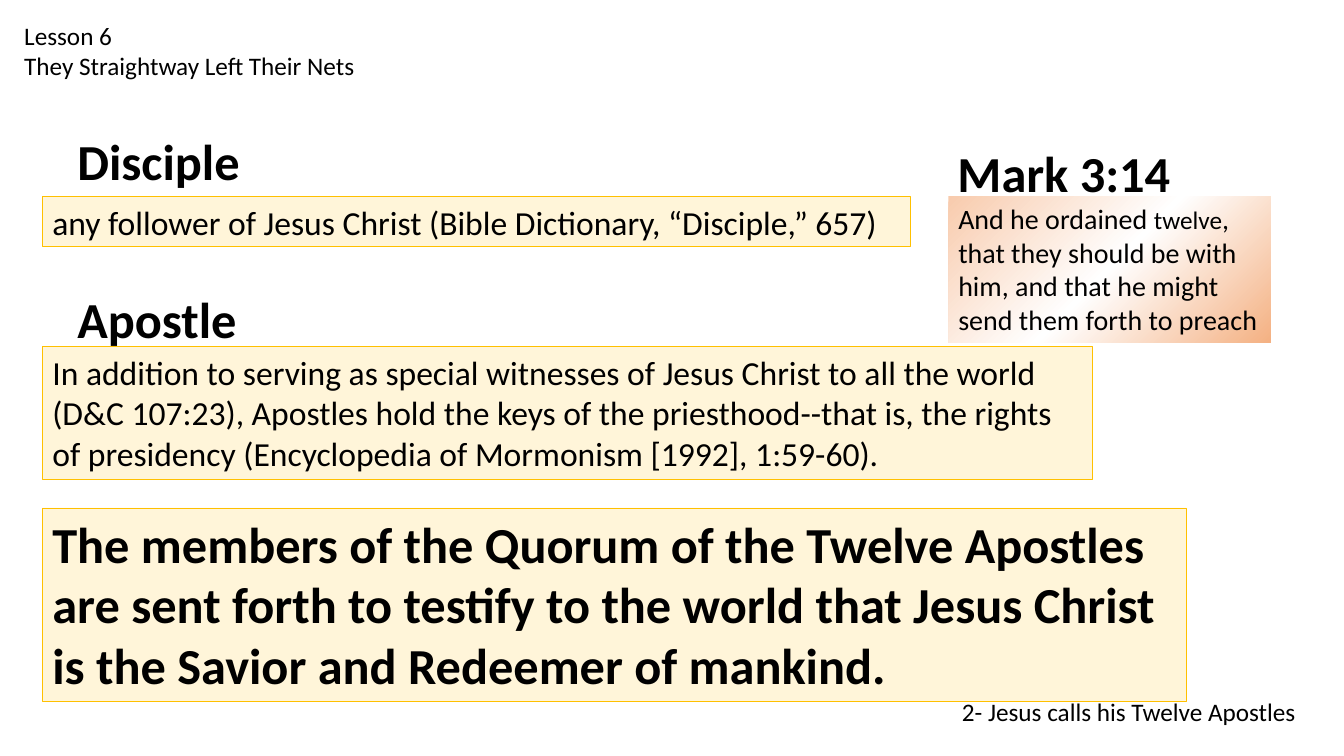
"""Build the lesson slide on disciples and apostles."""
from lxml.etree import SubElement
from pptx import Presentation
from pptx.dml.color import RGBColor
from pptx.enum.shapes import MSO_SHAPE
from pptx.enum.text import MSO_ANCHOR, MSO_AUTO_SIZE, PP_ALIGN
from pptx.oxml import parse_xml
from pptx.oxml.ns import nsdecls, qn
from pptx.util import Cm, Pt

HUES = {"ink": "000000", "cream": "FFF2CC", "gold": "FFC000",
        "rust": "F4B183", "white": "FFFFFF", "peach": "F8CBAD"}


def hue(name):
    return RGBColor.from_string(HUES[name])


class Deck:
    """Hold the text style and the current slide."""

    def __init__(self):
        self.font = "Calibri"
        self.show = Presentation()
        self.show.slide_width, self.show.slide_height = Cm(33.87), Cm(19.05)
        self.slide = self.show.slides.add_slide(self.show.slide_layouts[5])

    def words(self, shape, lines, size, bold=False, wrap=False, align=PP_ALIGN.LEFT):
        frame = shape.text_frame
        frame.word_wrap = wrap
        frame.auto_size = MSO_AUTO_SIZE.SHAPE_TO_FIT_TEXT
        frame.vertical_anchor = MSO_ANCHOR.TOP
        frame.margin_left = frame.margin_right = Cm(0.25)
        frame.margin_top = frame.margin_bottom = Cm(0.13)
        frame.text = "\n".join(lines)
        for para in frame.paragraphs:
            para.alignment = align
            font = para.font
            font.name, font.size, font.bold = self.font, Pt(size), bold
            font.color.rgb = hue("ink")

    def title(self, place, lines, size):
        shape = self.slide.shapes.title
        shape.left, shape.top, shape.width, shape.height = map(Cm, place)
        self.words(shape, lines, size)

    def label(self, place, text, size, bold=False, align=PP_ALIGN.LEFT):
        shape = self.slide.shapes.add_textbox(*map(Cm, place))
        self.words(shape, [text], size, bold, align=align)

    def panel(self, place, text, size, bold=False):
        shape = self.slide.shapes.add_shape(MSO_SHAPE.RECTANGLE, *map(Cm, place))
        shape.shadow.inherit = False
        self.words(shape, [text], size, bold, wrap=True)
        return shape

    def note(self, place, text, size, bold=False, glow=False):
        shape = self.panel(place, text, size, bold)
        shape.fill.solid()
        shape.fill.fore_color.rgb = hue("cream")
        tint = shape.element.spPr.find(qn("a:solidFill"))[0]
        SubElement(tint, qn("a:alpha"), val="74000")
        shape.line.color.rgb = hue("gold")
        shape.line.width = Pt(0.5)
        if glow:
            run = shape.element.find(".//" + qn("a:r"))
            run.get_or_add_rPr().append(parse_xml(
                f'<a:effectLst {nsdecls("a")}><a:outerShdw blurRad="38100" '
                'dist="38100" dir="2700000" algn="tl"><a:srgbClr val="000000">'
                '<a:alpha val="43000"/></a:srgbClr></a:outerShdw></a:effectLst>'))

    def verse(self, place, parts, size, small):
        shape = self.panel(place, parts[0], size)
        para = shape.text_frame.paragraphs[0]
        for part in parts[1:]:
            para.add_run().text = part
        para.runs[1].font.size = Pt(small)
        shape.line.fill.background()
        shape.fill.background()
        stops = "".join(
            f'<a:gs pos="{spot * 1000}"><a:srgbClr val="{HUES[name]}"/></a:gs>'
            for spot, name in ((0, "rust"), (50, "white"), (100, "peach")))
        blend = parse_xml(
            f'<a:gradFill {nsdecls("a")} rotWithShape="1"><a:gsLst>{stops}</a:gsLst>'
            '<a:path path="circle"><a:fillToRect l="100000" t="100000"/></a:path>'
            '</a:gradFill>')
        props = shape.element.spPr
        props.replace(props.find(qn("a:noFill")), blend)


def main():
    deck = Deck()
    deck.title((0.36, 0.38, 8.94, 1.8),
               ["Lesson 6", "They Straightway Left Their Nets"], 18)
    deck.label((23.88, 17.42, 9.02, 1.02), "2- Jesus calls his Twelve Apostles",
               18, align=PP_ALIGN.RIGHT)
    deck.label((1.7, 7.14, 4.57, 1.8), "Apostle", 36, True)
    deck.note((1.07, 8.74, 26.47, 3.33),
              "In addition to serving as special witnesses of Jesus Christ to all "
              "the world (D&C 107:23), Apostles hold the keys of the "
              "priesthood--that is, the rights of presidency (Encyclopedia of "
              "Mormonism [1992], 1:59-60).", 24)
    deck.label((1.7, 3.15, 4.65, 1.8), "Disciple", 36, True)
    deck.note((1.07, 4.95, 21.87, 1.27),
              "any follower of Jesus Christ (Bible Dictionary, “Disciple,” 657)",
              24, glow=True)
    deck.note((1.07, 12.8, 28.83, 4.88),
              "The members of the Quorum of the Twelve Apostles are sent forth to "
              "testify to the world that Jesus Christ is the Savior and Redeemer "
              "of mankind.", 36, True, glow=True)
    deck.label((23.88, 3.45, 5.92, 1.8), "Mark 3:14", 36, True)
    deck.verse((23.9, 4.95, 8.13, 3.68),
               ["And he ordained ", "twelve", ", that they should be with him, "
                "and that he might send them forth to preach"], 20, 18)
    deck.show.save("out.pptx")


if __name__ == "__main__":
    main()
